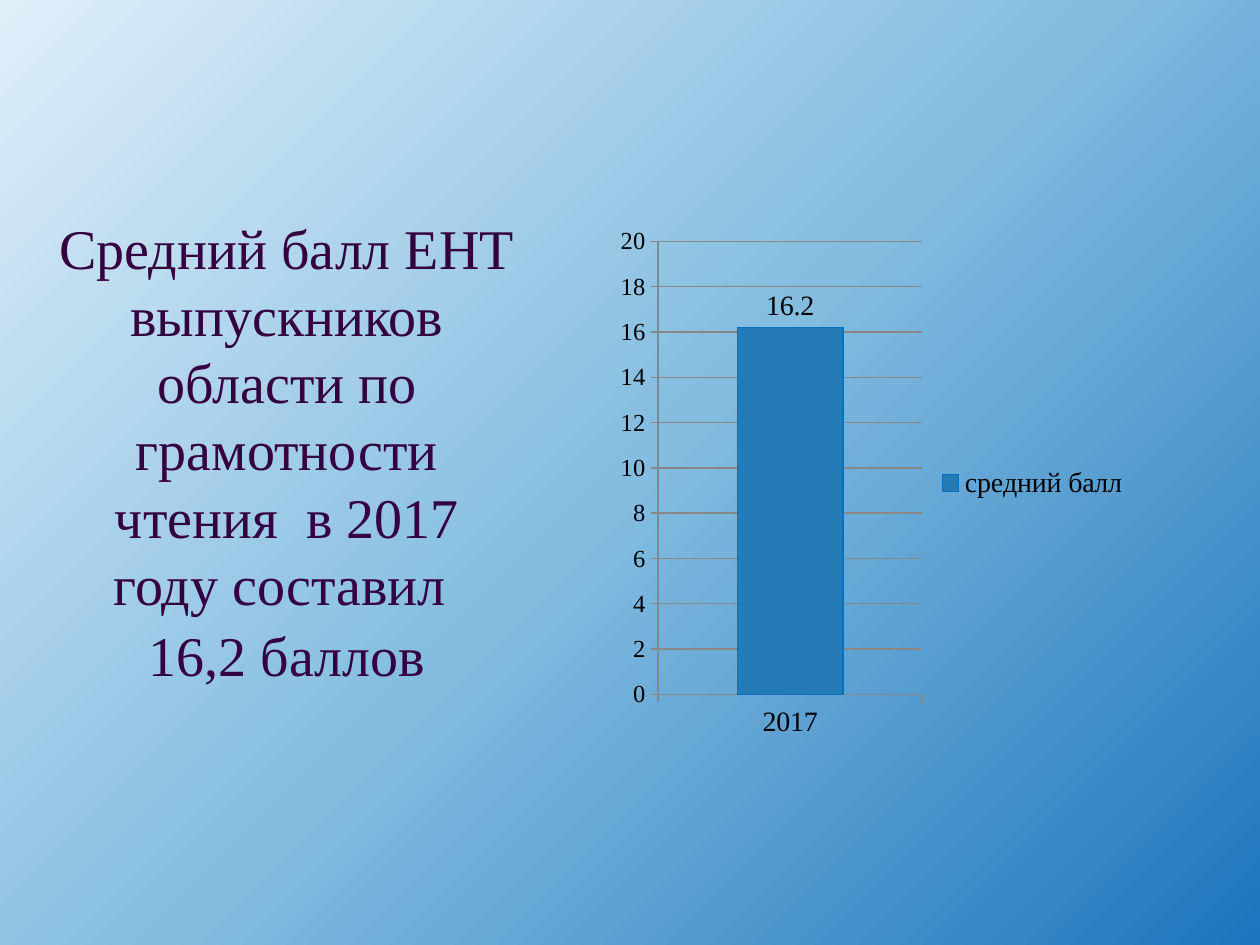
from lxml import etree
from pptx import Presentation
from pptx.chart.data import CategoryChartData
from pptx.dml.color import RGBColor
from pptx.enum.chart import XL_CHART_TYPE, XL_LABEL_POSITION, XL_LEGEND_POSITION, XL_TICK_MARK
from pptx.enum.text import MSO_ANCHOR, MSO_AUTO_SIZE, PP_ALIGN
from pptx.oxml import parse_xml
from pptx.oxml.ns import nsdecls, qn
from pptx.util import Emu, Pt

COLUMN = XL_CHART_TYPE.COLUMN_CLUSTERED
OUTSIDE_END = XL_LABEL_POSITION.OUTSIDE_END
LEGEND_RIGHT = XL_LEGEND_POSITION.RIGHT
TICK_OUTSIDE = XL_TICK_MARK.OUTSIDE
CENTER = PP_ALIGN.CENTER

PLUM = RGBColor(0x34, 0x00, 0x40)
BLACK = RGBColor(0x00, 0x00, 0x00)
GRAY = RGBColor(0x87, 0x87, 0x87)
BAR_BLUE = RGBColor(0x25, 0x7B, 0xB5)
OUTLINE_BLUE = RGBColor(0x00, 0x70, 0xC0)
DEEP_BLUE = RGBColor(0x1D, 0x75, 0xBD)
SKY_BLUE = RGBColor(0x84, 0xBD, 0xE0)
PALE_BLUE = RGBColor(0xDF, 0xEF, 0xF9)

SERIF = "Times New Roman"
BASE_FONT = "Calibri"


def px(value):
    return Emu(round(value * 914400 / 126))


def place(shape, left, top, width, height):
    shape.left, shape.top = px(left), px(top)
    shape.width, shape.height = px(width), px(height)


def format_font(font, size, name=SERIF, color=BLACK):
    font.size, font.name = Pt(size), name
    font.color.rgb = color


def set_background(slide, stops, angle):
    """Fill the background with a linear gradient; angle is clockwise degrees."""
    fill = slide.background.fill
    fill.gradient()
    gradient = slide.background._cSld.find(".//" + qn("a:gradFill"))
    stop_xml = "".join(
        f'<a:gs pos="{percent * 1000}"><a:srgbClr val="{color}"/></a:gs>'
        for percent, color in stops)
    gradient.replace(gradient.find(qn("a:gsLst")),
                     parse_xml(f'<a:gsLst {nsdecls("a")}>{stop_xml}</a:gsLst>'))
    gradient.find(qn("a:lin")).set("ang", str(angle * 60000))


def write_text(frame, lines, size, color, line_spacing, space_between):
    frame.word_wrap = True
    frame.auto_size = MSO_AUTO_SIZE.NONE
    frame.vertical_anchor = MSO_ANCHOR.TOP
    for index, line in enumerate(lines):
        paragraph = frame.add_paragraph() if index else frame.paragraphs[0]
        paragraph.alignment = CENTER
        paragraph.line_spacing = Pt(line_spacing)
        paragraph.space_before = Pt(space_between if index else 0)
        properties = paragraph._p.get_or_add_pPr()
        properties.set("marL", "0")
        properties.set("indent", "0")
        etree.SubElement(properties, qn("a:buNone"))
        run = paragraph.add_run()
        run.text = line
        format_font(run.font, size, color=color)


def format_axis(axis, size):
    axis.major_tick_mark = TICK_OUTSIDE
    axis.format.line.color.rgb = GRAY
    axis.format.line.width = Pt(0.75)
    format_font(axis.tick_labels.font, size)


def add_score_chart(slide):
    data = CategoryChartData()
    data.categories = ["2017"]
    data.add_series("средний балл", [16.2])
    chart = slide.shapes.add_chart(
        COLUMN, px(610), px(217), px(532), px(532), data).chart
    chart.has_title = False
    format_font(chart.font, 10, BASE_FONT)

    # Axes and gridlines
    format_axis(chart.category_axis, 16)
    value_axis = chart.value_axis
    format_axis(value_axis, 14)
    value_axis.minimum_scale, value_axis.maximum_scale = 0, 20
    value_axis.major_unit = 2
    value_axis.has_major_gridlines = True
    gridline = value_axis.major_gridlines.format.line
    gridline.color.rgb, gridline.width = GRAY, Pt(0.75)

    # Legend
    chart.has_legend = True
    chart.legend.position = LEGEND_RIGHT
    chart.legend.include_in_layout = False
    format_font(chart.legend.font, 16)

    # Column and its value label
    plot = chart.plots[0]
    plot.gap_width = 150
    plot.vary_by_categories = False
    series = plot.series[0]
    series.format.fill.solid()
    series.format.fill.fore_color.rgb = BAR_BLUE
    series.format.line.color.rgb = OUTLINE_BLUE
    series.format.line.width = Pt(0.75)
    labels = series.data_labels
    labels.show_value = True
    labels.position = OUTSIDE_END
    format_font(labels.font, 16)


def main():
    presentation = Presentation()
    presentation.slide_width, presentation.slide_height = px(1260), px(945)
    slide = presentation.slides.add_slide(presentation.slide_layouts[1])
    set_background(slide, [(0, DEEP_BLUE), (50, SKY_BLUE), (100, PALE_BLUE)], 225)

    # Statement on the left
    title, body = slide.placeholders
    title.element.getparent().remove(title.element)
    place(body, 44, 207, 486, 504)
    write_text(
        body.text_frame,
        ["Средний балл ЕНТ выпускников области по грамотности чтения  в 2017 году составил ",
         "16,2 баллов"],
        size=32, color=PLUM, line_spacing=38.4, space_between=2)

    # Chart on the right
    add_score_chart(slide)
    presentation.save("out.pptx")


if __name__ == "__main__":
    main()
